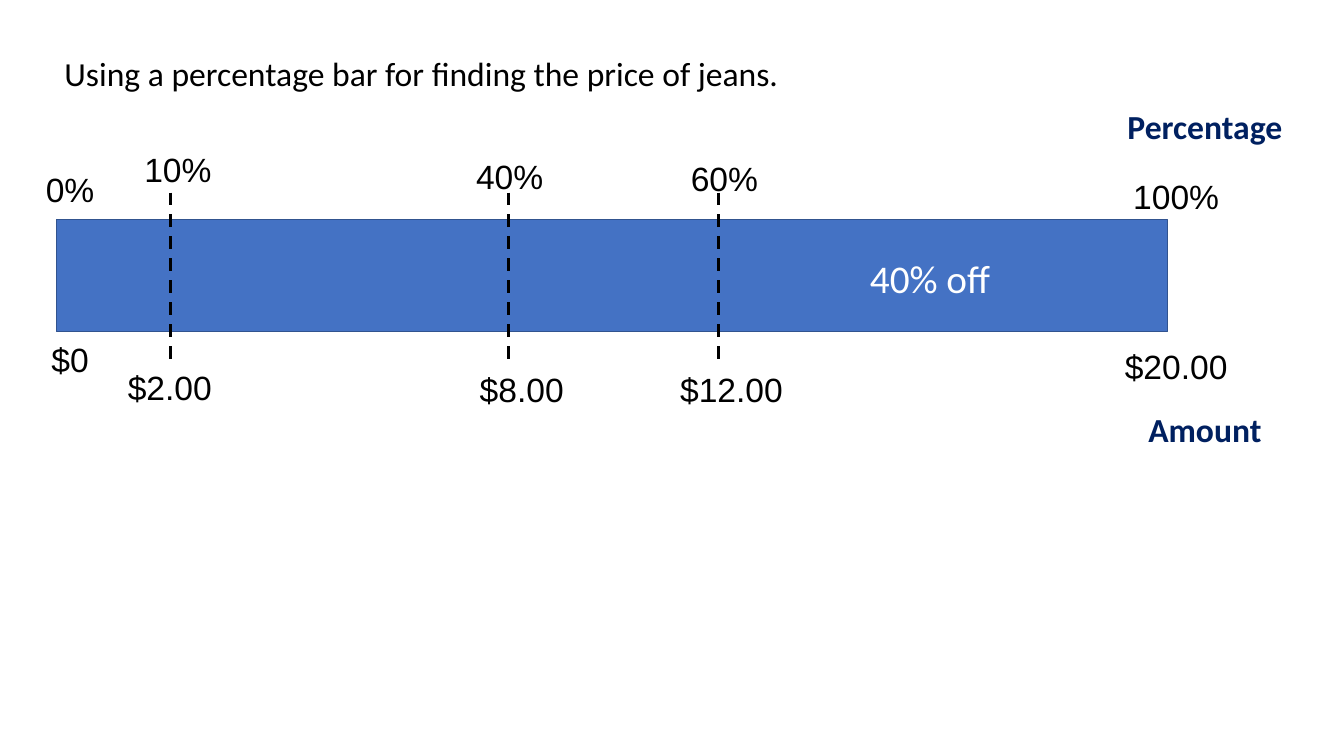
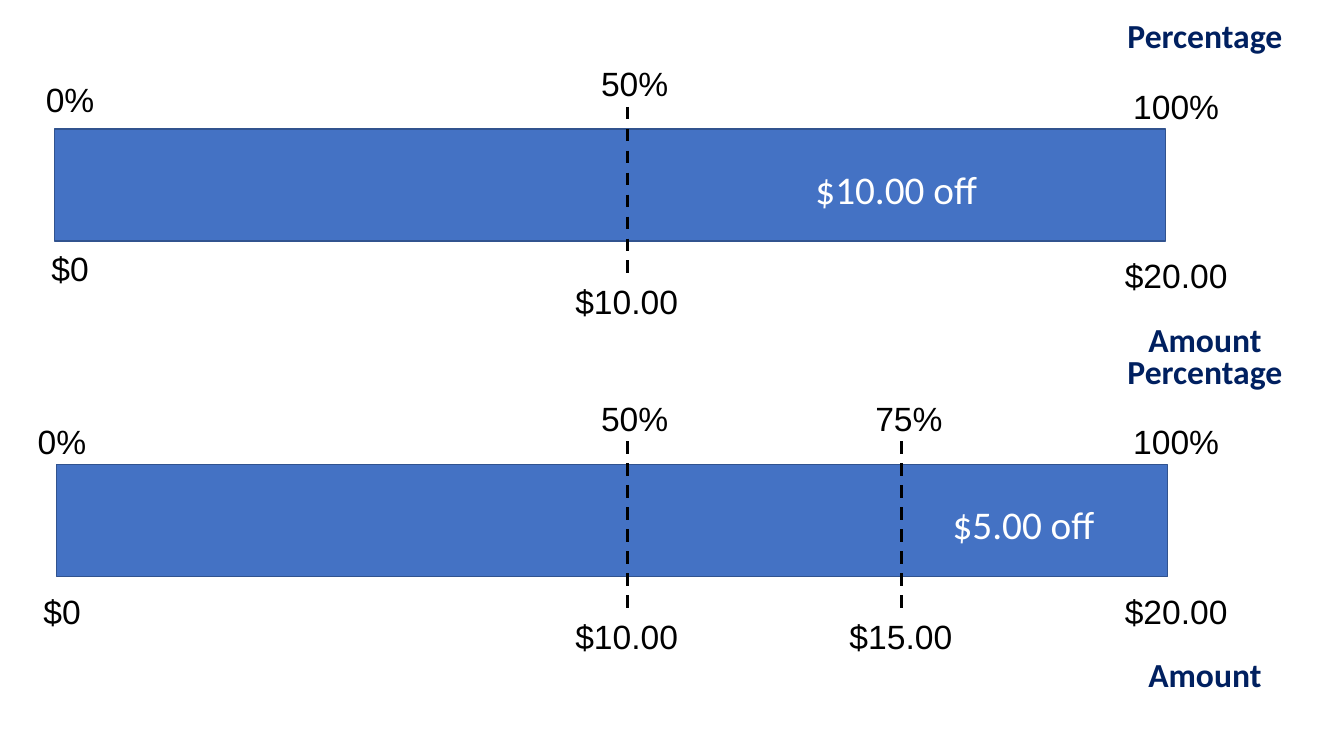
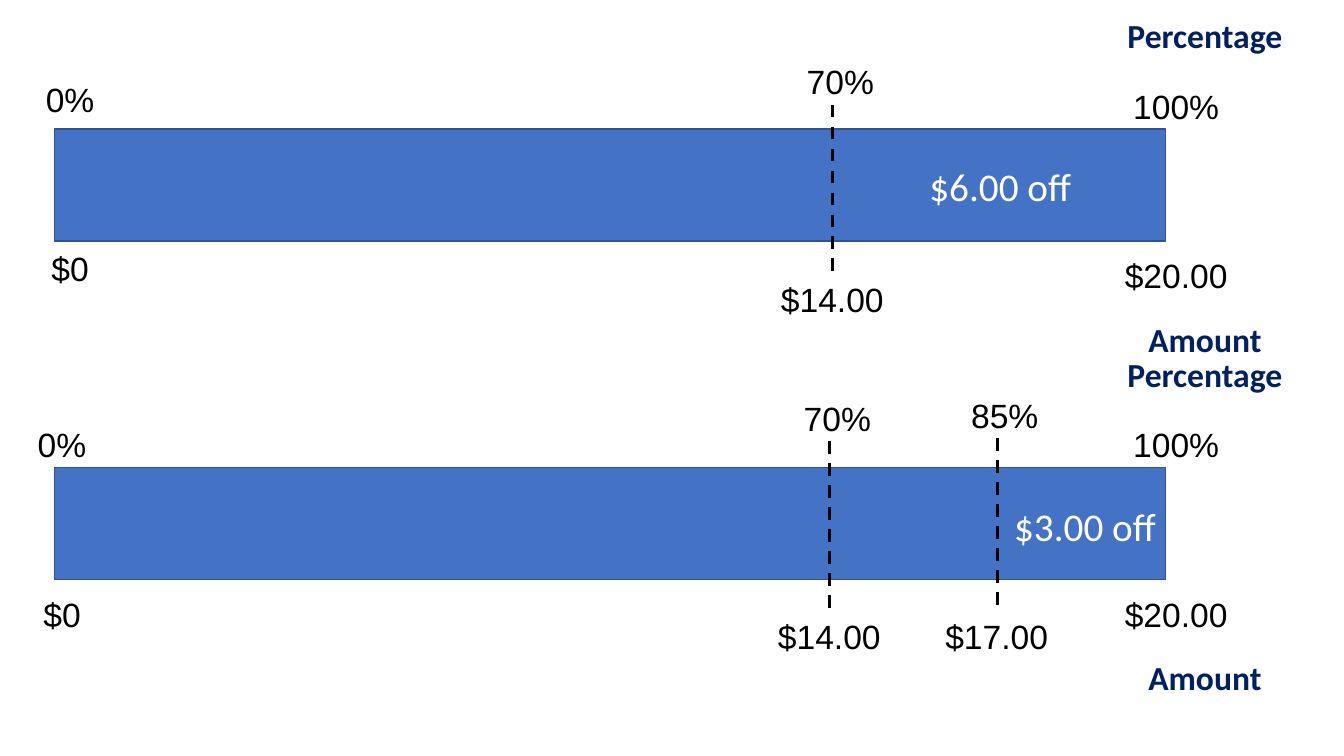
from dataclasses import dataclass

import lxml.etree
import pptx
import pptx.dml.color
import pptx.enum.dml
import pptx.enum.shapes
import pptx.enum.text
import pptx.oxml.ns
import pptx.slide
import pptx.util

Inches = pptx.util.Inches
Align = pptx.enum.text.PP_ALIGN

BLACK = "000000"
WHITE = "FFFFFF"
NAVY = "002060"
BLUE = "4472C4"
BLUE_EDGE = "31538F"

BAR_WIDTH = 11.02
BAR_HEIGHT = 1.11
END_LEFT = 10.99
LABEL_WIDTH = 1.35
HEADING_WIDTH = 1.92
MARK_HEIGHT = 1.68


@dataclass(frozen=True)
class Style:
    font: str
    size: float
    color: str
    bold: bool = False
    height: float = 0.5


PLAIN = Style("Calibri", 24, BLACK)
HEADING = Style("Calibri", 24, NAVY, bold=True)
VALUE = Style("Arial", 24, BLACK)
DISCOUNT = Style("Calibri", 28, WHITE, height=0.57)


@dataclass(frozen=True)
class Mark:
    x: float
    top: float
    percent: str
    amount: str
    percent_dx: float = -0.6
    percent_dy: float = -0.48
    amount_dx: float = -0.68
    amount_dy: float = 0


@dataclass(frozen=True)
class Discount:
    text: str
    left: float
    top: float
    width: float = 1.82
    align: Align = Align.LEFT


@dataclass(frozen=True)
class Bar:
    left: float
    top: float
    marks: tuple[Mark, ...]
    discount: Discount
    zero_left: float = 0.02
    zero_dy: float = -0.07


@dataclass(frozen=True)
class Page:
    bars: tuple[Bar, ...]
    intro: str = ""


PAGES = (
    Page(
        intro="Using a percentage bar for finding the price of jeans.",
        bars=(
            Bar(0.56, 2.18, (
                Mark(5.04, 1.91, "40%", "$8.00", -0.66, -0.41, -0.54, 0.02),
                Mark(1.69, 1.91, "10%", "$2.00"),
                Mark(7.13, 1.91, "60%", "$12.00", -0.62, -0.39, -0.55, 0.02),
            ), Discount("40% off", 8.53, 2.47)),
        ),
    ),
    Page(bars=(
        Bar(0.54, 1.28, (Mark(6.22, 1.06, "50%", "$10.00"),),
            Discount("$10.00 off", 7.99, 1.59, 2.06)),
        Bar(0.56, 4.61, (
            Mark(6.22, 4.38, "50%", "$10.00"),
            Mark(8.94, 4.38, "75%", "$15.00"),
        ), Discount("$5.00 off", 9.35, 4.91), zero_left=-0.06, zero_dy=0),
    )),
    Page(bars=(
        Bar(0.54, 1.28, (Mark(8.26, 1.04, "70%", "$14.00"),),
            Discount("$6.00 off", 8.67, 1.56, 2.5, Align.CENTER)),
        Bar(0.54, 4.64, (
            Mark(8.23, 4.38, "70%", "$14.00"),
            Mark(9.89, 4.35, "85%", "$17.00", amount_dy=0.03),
        ), Discount("$3.00 off", 9.96, 4.93), zero_left=-0.06, zero_dy=0),
    )),
)


def rgb(color: str) -> pptx.dml.color.RGBColor:
    return pptx.dml.color.RGBColor.from_string(color)


def add_text(slide: pptx.slide.Slide, text: str, left: float, top: float,
             width: float, style: Style, align: Align = Align.CENTER) -> None:
    sp = slide.shapes.add_textbox(
        Inches(left), Inches(top), Inches(width), Inches(style.height))
    tf = sp.text_frame
    tf.word_wrap = True
    tf.auto_size = pptx.enum.text.MSO_AUTO_SIZE.SHAPE_TO_FIT_TEXT
    p = tf.paragraphs[0]
    p.alignment = align
    r = p.add_run()
    r.text = text
    r.font.name = style.font
    r.font.size = pptx.util.Pt(style.size)
    r.font.bold = style.bold
    r.font.color.rgb = rgb(style.color)


def add_value(slide: pptx.slide.Slide, text: str, left: float, top: float) -> None:
    add_text(slide, text, left, top, LABEL_WIDTH, VALUE)


def add_mark(slide: pptx.slide.Slide, mark: Mark) -> None:
    bottom = mark.top + MARK_HEIGHT
    line = slide.shapes.add_connector(
        pptx.enum.shapes.MSO_CONNECTOR.STRAIGHT,
        Inches(mark.x), Inches(mark.top), Inches(mark.x), Inches(bottom))
    line.line.color.rgb = rgb(BLACK)
    line.line.width = pptx.util.Pt(2.25)
    line.line.dash_style = pptx.enum.dml.MSO_LINE.DASH
    lxml.etree.SubElement(
        line._element.spPr, pptx.oxml.ns.qn("a:effectLst"))
    add_value(slide, mark.percent, mark.x + mark.percent_dx, mark.top + mark.percent_dy)
    add_value(slide, mark.amount, mark.x + mark.amount_dx, bottom + mark.amount_dy)


def add_bar(slide: pptx.slide.Slide, bar: Bar) -> None:
    sp = slide.shapes.add_shape(
        pptx.enum.shapes.MSO_SHAPE.RECTANGLE,
        Inches(bar.left), Inches(bar.top), Inches(BAR_WIDTH), Inches(BAR_HEIGHT))
    sp.shadow.inherit = False
    sp.fill.solid()
    sp.fill.fore_color.rgb = rgb(BLUE)
    sp.line.color.rgb = rgb(BLUE_EDGE)
    sp.line.width = pptx.util.Pt(1)

    percent_top = bar.top - 0.48
    amount_top = bar.top + 1.2
    add_text(slide, "Percentage", END_LEFT, bar.top - 1.18, HEADING_WIDTH, HEADING)
    add_text(slide, "Amount", END_LEFT, bar.top + 1.83, HEADING_WIDTH, HEADING)
    add_value(slide, "100%", END_LEFT, percent_top)
    add_value(slide, "$20.00", END_LEFT, amount_top)
    add_value(slide, "0%", bar.zero_left, percent_top + bar.zero_dy)
    add_value(slide, "$0", bar.zero_left, amount_top + bar.zero_dy)
    for mark in bar.marks:
        add_mark(slide, mark)
    off = bar.discount
    add_text(slide, off.text, off.left, off.top, off.width, DISCOUNT, off.align)


def main() -> None:
    prs = pptx.Presentation()
    prs.slide_width = Inches(13.33)
    prs.slide_height = Inches(7.5)
    for page in PAGES:
        slide = prs.slides.add_slide(prs.slide_layouts[6])
        if page.intro:
            add_text(slide, page.intro, 0.54, 0.48, 8.48, PLAIN, Align.LEFT)
        for bar in page.bars:
            add_bar(slide, bar)
    prs.save("out.pptx")


if __name__ == "__main__":
    main()
